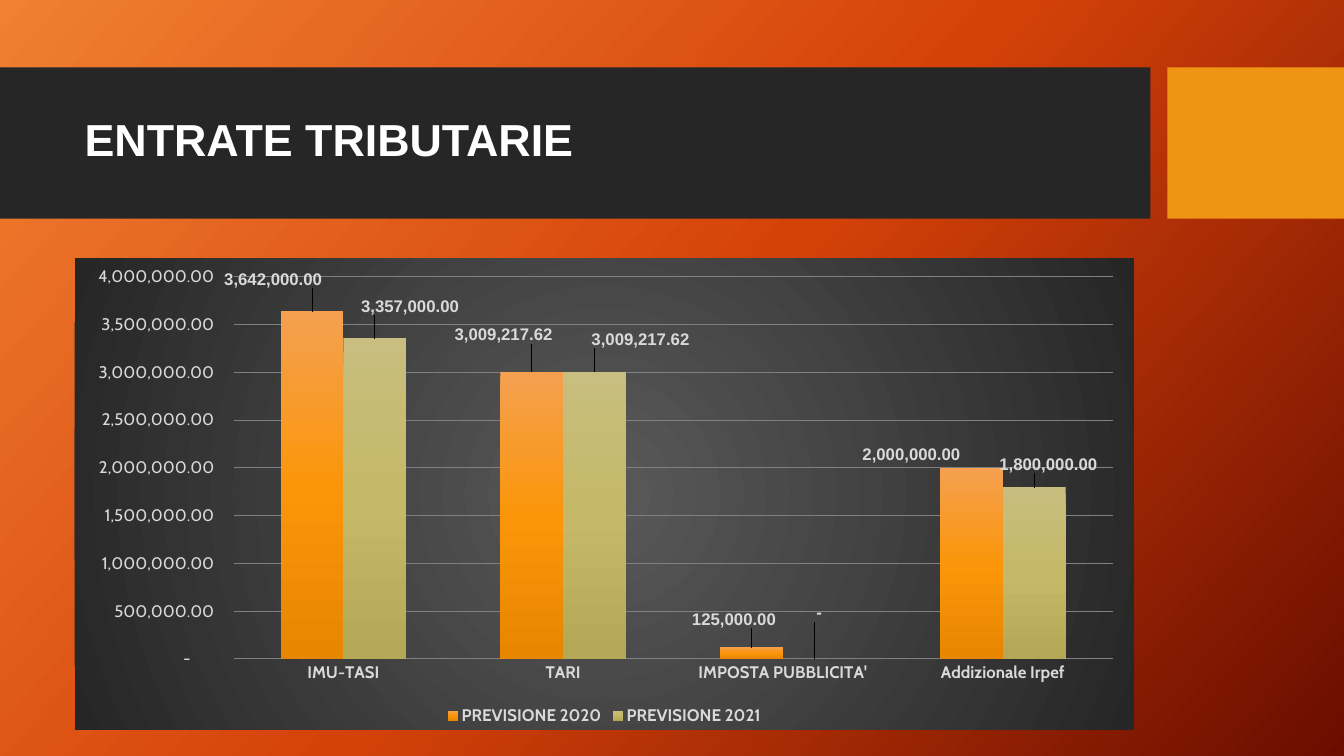
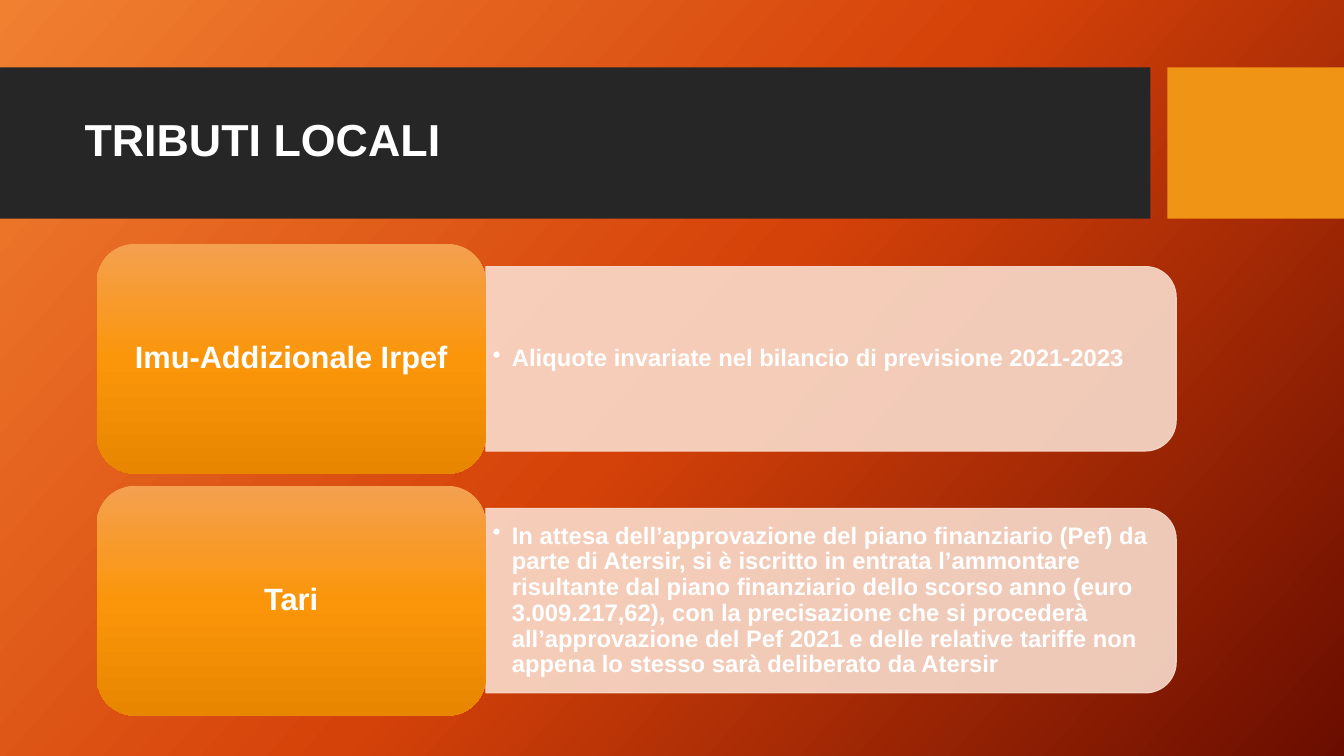
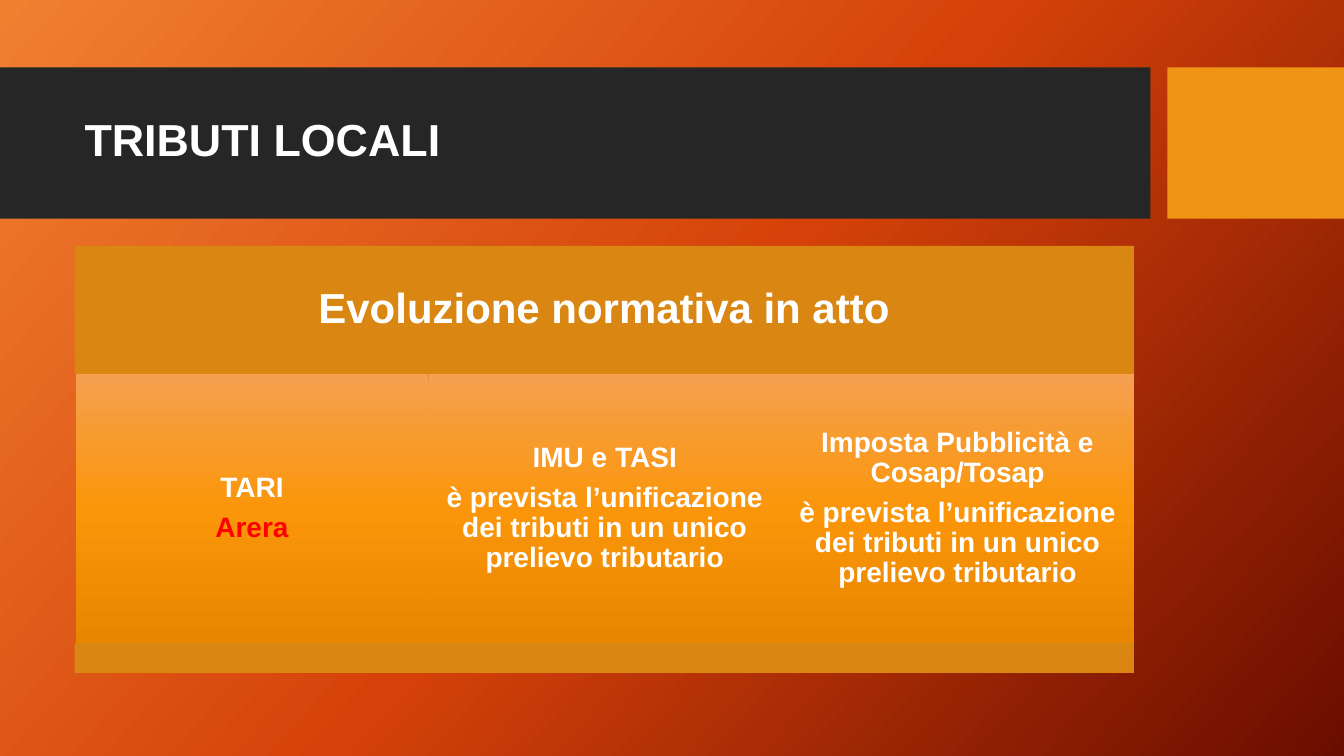
"""Build three slides on local tax revenue."""
from pptx import Presentation
from pptx.chart.data import CategoryChartData
from pptx.dml.color import RGBColor
from pptx.enum.chart import XL_CHART_TYPE as ChartType, XL_LABEL_POSITION as LabelPosition
from pptx.enum.chart import XL_LEGEND_POSITION as LegendPosition, XL_TICK_MARK as TickMark
from pptx.enum.shapes import MSO_SHAPE as Preset
from pptx.enum.text import MSO_ANCHOR as Anchor, PP_ALIGN as Align
from pptx.oxml import parse_xml
from pptx.oxml.ns import nsdecls, qn
from pptx.util import Pt

COLORS = {
    "band": "262626", "accent": "F09415", "white": "FFFFFF", "label": "D9D9D9",
    "grid": "808080", "pale": "F9DCCC", "ochre": "DA8613", "red": "FF0000",
}
GRADIENTS = {
    "background": ("F18031", "D54209", "6A0D00"),
    "orange": ("F4A050", "FB960A", "E88600"),
    "olive": ("C8BE7F", "C5B867", "B4A756"),
    "chart": ("595959", "262626"),
}
LEFT, WIDTH = 53.3, 756.7

REVENUE_TITLE = "ENTRATE TRIBUTARIE"
TAXES_TITLE = "TRIBUTI LOCALI"
CATEGORIES = ["IMU-TASI", "TARI", "IMPOSTA PUBBLICITA'", "Addizionale Irpef"]
SERIES = [
    ("PREVISIONE 2020", "orange", [3642000, 3009217.62, 125000, 2000000],
     [(-0.03, -0.04), (-0.02, -0.05), (-0.01, -0.03), (-0.05, 0)]),
    ("PREVISIONE 2021", "olive", [3357000, 3009217.62, 0, 1800000],
     [(0.04, -0.04), (0.05, -0.04), (0.02, -0.07), (0.02, -0.02)]),
]
AMOUNT = r'_-* #,##0.00\ _€_-;\-* #,##0.00\ _€_-;_-* "-"??\ _€_-;_-@_-'
TAX_ROWS = [
    ("Imu-Addizionale Irpef", "Aliquote invariate nel bilancio di previsione 2021-2023"),
    ("Tari", "In attesa dell’approvazione del piano finanziario (Pef) da parte di Atersir, "
     "si è iscritto in entrata l’ammontare risultante dal piano finanziario dello scorso "
     "anno (euro 3.009.217,62), con la precisazione che si procederà all’approvazione del "
     "Pef 2021 e delle relative tariffe non appena lo stesso sarà deliberato da Atersir"),
]
CHANGES_HEADING = "Evoluzione normativa in atto"
MERGER = "è prevista l’unificazione dei tributi in un unico prelievo tributario"
CHANGES = [
    ("TARI", "Arera", "red"),
    ("IMU e TASI", MERGER, "white"),
    ("Imposta Pubblicità e Cosap/Tosap", MERGER, "white"),
]


def rgb(name):
    return RGBColor.from_string(COLORS[name])


def gradient(element, name, direction='<a:lin ang="5400000" scaled="0"/>'):
    colors = GRADIENTS[name]
    stops = "".join(
        f'<a:gs pos="{100000 * i // (len(colors) - 1)}"><a:srgbClr val="{color}"/></a:gs>'
        for i, color in enumerate(colors))
    fill = parse_xml(f'<a:gradFill {nsdecls("a")} rotWithShape="1">'
                     f'<a:gsLst>{stops}</a:gsLst>{direction}</a:gradFill>')
    solid = next(element.iter(qn("a:solidFill")))
    solid.getparent().replace(solid, fill)


def add_block(page, preset, left, top, width, height, fill):
    block = page.shapes.add_shape(preset, Pt(left), Pt(top), Pt(width), Pt(height))
    block.shadow.inherit = False
    block.line.fill.background()
    block.fill.solid()
    if fill in GRADIENTS:
        gradient(block._element.spPr, fill)
    else:
        block.fill.fore_color.rgb = rgb(fill)
    return block


def add_box(page, left, top, width, height):
    return page.shapes.add_textbox(Pt(left), Pt(top), Pt(width), Pt(height))


def write(shape, lines, size, inset=(7.2, 3.6), align=Align.CENTER, bullet=False):
    frame = shape.text_frame
    frame.word_wrap = True
    frame.vertical_anchor = Anchor.MIDDLE
    frame.margin_left = frame.margin_right = Pt(inset[0])
    frame.margin_top = frame.margin_bottom = Pt(inset[1])
    frame.text = "\n".join(text for text, _ in lines)
    for i, (para, (_, color)) in enumerate(zip(frame.paragraphs, lines)):
        if bullet:
            properties = para._p.get_or_add_pPr()
            properties.set("marL", str(Pt(13.7)))
            properties.set("indent", str(-Pt(13.7)))
            properties.append(parse_xml(f'<a:buChar {nsdecls("a")} char="•"/>'))
        para.alignment = align
        para.line_spacing = 0.9
        if i:
            para.space_before = Pt(7)
        for span in para.runs:
            set_font(span.font, size, color, True, "Arial")


def set_font(font, size, color, bold=False, name="Cabin"):
    font.name, font.size, font.bold = name, Pt(size), bold
    font.color.rgb = rgb(color)


def add_page(deck, title):
    page = deck.slides.add_slide(deck.slide_layouts[6])
    add_block(page, Preset.RECTANGLE, 0, 48.2, 821.8, 108, "band")
    add_block(page, Preset.RECTANGLE, 833.8, 48.2, 126.2, 108, "accent")
    write(add_box(page, LEFT, 59, WIDTH, 85), [(title, "white")], 32, align=Align.LEFT)
    return page


def manual_layout(x, y, size=""):
    return parse_xml(f'<c:layout {nsdecls("c")}><c:manualLayout>{size and PLOT_MODES}'
                     f'<c:x val="{x}"/><c:y val="{y}"/>{size}</c:manualLayout></c:layout>')


PLOT_MODES = ('<c:layoutTarget val="inner"/><c:xMode val="edge"/><c:yMode val="edge"/>')


def style_axis(axis, bold):
    axis.major_tick_mark = axis.minor_tick_mark = TickMark.NONE
    axis.format.line.fill.background()
    set_font(axis.tick_labels.font, 12, "label", bold)


def style_labels(series, offsets):
    labels = series.data_labels
    labels.show_value = True
    labels.number_format, labels.number_format_is_linked = AMOUNT, False
    labels.position = LabelPosition.OUTSIDE_END
    set_font(labels.font, 12, "label", True, "Arial")
    number_format = labels._element.find(qn("c:numFmt"))
    for i, offset in enumerate(offsets):
        label = series.points[i].data_label
        set_font(label.font, 12, "label", True, "Arial")
        label.position = LabelPosition.OUTSIDE_END
        index = label._get_or_add_dLbl().find(qn("c:idx"))
        index.addnext(parse_xml(
            f'<c:numFmt {nsdecls("c")} sourceLinked="0"/>'))
        index.getnext().set("formatCode", number_format.get("formatCode"))
        index.addnext(manual_layout(*offset))


def add_revenue_chart(page):
    data = CategoryChartData()
    data.categories = CATEGORIES
    for name, _, values, _ in SERIES:
        data.add_series(name, values)
    chart = page.shapes.add_chart(ChartType.COLUMN_CLUSTERED, Pt(LEFT), Pt(184.3),
                                  Pt(WIDTH), Pt(337), data).chart
    chart.has_title = False
    set_font(chart.font, 10, "white")
    chart.has_legend = True
    chart.legend.position = LegendPosition.BOTTOM
    chart.legend.include_in_layout = False
    set_font(chart.legend.font, 12, "label", True)

    area = parse_xml(f'<c:spPr {nsdecls("c", "a")}><a:solidFill/>'
                     '<a:ln><a:noFill/></a:ln></c:spPr>')
    gradient(area, "chart", '<a:path path="circle"><a:fillToRect l="50000" t="50000" '
             'r="50000" b="50000"/></a:path>')
    chart_root = chart._chartSpace
    chart_root.find(qn("c:chart")).addnext(area)
    plot_area = next(chart_root.iter(qn("c:plotArea")))
    for layout in plot_area.findall(qn("c:layout")):
        plot_area.remove(layout)
    plot_area.insert(0, manual_layout(0.15, 0.04, '<c:w val="0.83"/><c:h val="0.81"/>'))

    style_axis(chart.category_axis, True)
    amounts = chart.value_axis
    style_axis(amounts, False)
    amounts.minimum_scale, amounts.maximum_scale, amounts.major_unit = 0, 4000000, 500000
    amounts.tick_labels.number_format = AMOUNT
    amounts.tick_labels.number_format_is_linked = False
    amounts.major_gridlines.format.line.color.rgb = rgb("grid")
    amounts.major_gridlines.format.line.width = Pt(0.75)

    plot = chart.plots[0]
    plot.gap_width, plot.overlap, plot.vary_by_categories = 150, 0, False
    for series, (_, fill, _, offsets) in zip(plot.series, SERIES):
        series.format.fill.solid()
        gradient(series._element, fill)
        style_labels(series, offsets)


def add_tax_rows(page):
    card_left, card_width, card_height = 69.1, 277.9, 164.2
    panel_left, panel_width, panel_height = 347, 493.2, 131.8
    text_width, text_height = 487.4, 118.8
    for i, (name, detail) in enumerate(TAX_ROWS):
        top = 174.2 + i * 172.8
        middle = top + card_height / 2
        panel = add_block(page, Preset.ROUND_2_SAME_RECTANGLE,
                          panel_left + (panel_width - panel_height) / 2,
                          middle - panel_width / 2, panel_height, panel_width, "pale")
        panel.rotation = 90
        panel.line.color.rgb = rgb("pale")
        panel.line.width = Pt(0.75)
        for color in panel._element.spPr.iter(qn("a:srgbClr")):
            color.append(parse_xml(f'<a:alpha {nsdecls("a")} val="90000"/>'))
        box = add_box(page, panel_left, middle - text_height / 2, text_width, text_height)
        write(box, [(detail, "white")], 17, (5, 2.9), Align.LEFT, True)
        card = add_block(page, Preset.ROUNDED_RECTANGLE, card_left, top,
                         card_width, card_height, "orange")
        write(card, [(name, "white")], 22, (6.5, 3.6))


def add_changes(page):
    heading = add_block(page, Preset.RECTANGLE, LEFT, 175.7, WIDTH, 91.4, "ochre")
    write(heading, [(CHANGES_HEADING, "white")], 30, (8.6, 8.6))
    for i, (tax, change, color) in enumerate(CHANGES):
        column = add_block(page, Preset.RECTANGLE, 54 + i * 252, 267.1, 252, 192.2, "orange")
        write(column, [(tax, "white"), (change, color)], 20, (5.8, 5.8))
    add_block(page, Preset.RECTANGLE, LEFT, 459.3, WIDTH, 21.4, "ochre")


def main():
    deck = Presentation()
    deck.slide_width, deck.slide_height = Pt(960), Pt(540)
    master = deck.slide_master
    master.background.fill.solid()
    gradient(master._element, "background", '<a:lin ang="2520000" scaled="0"/>')
    add_revenue_chart(add_page(deck, REVENUE_TITLE))
    add_tax_rows(add_page(deck, TAXES_TITLE))
    add_changes(add_page(deck, TAXES_TITLE))
    deck.save("out.pptx")


if __name__ == "__main__":
    main()
